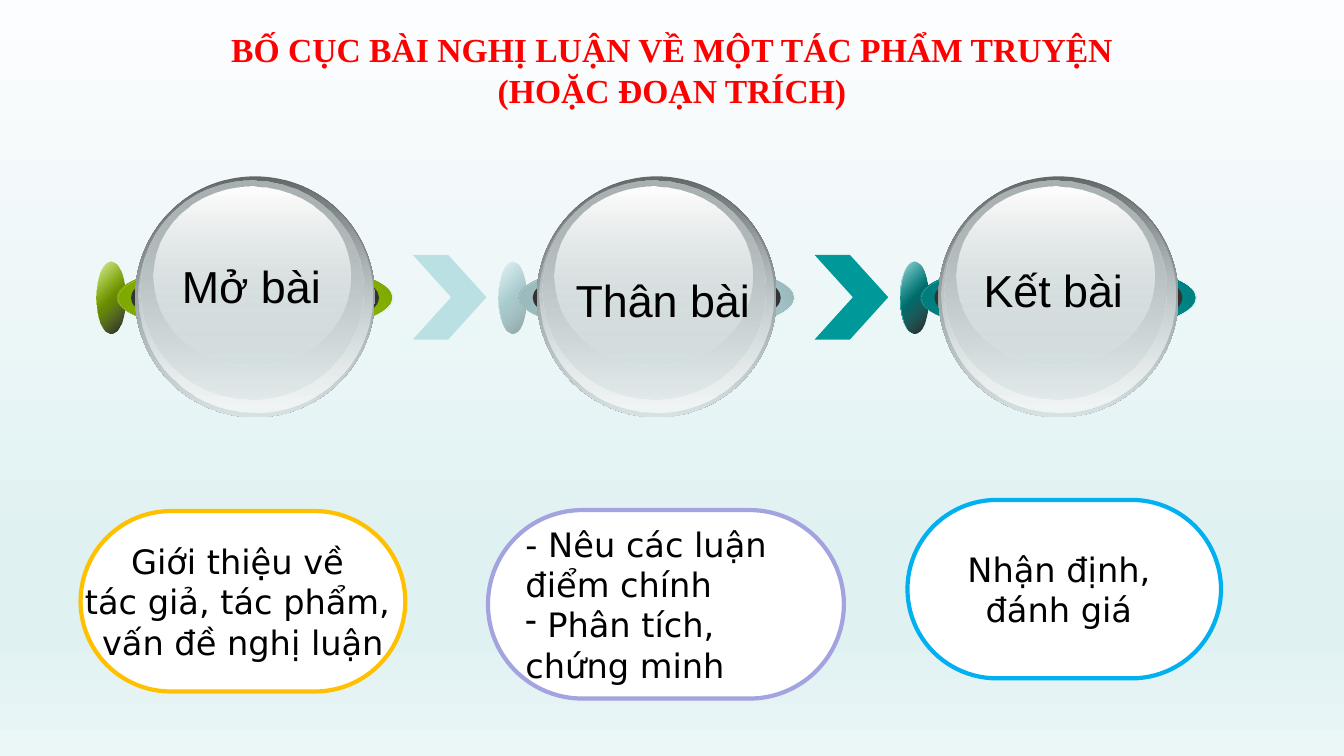
from dataclasses import dataclass

from lxml.etree import SubElement
from pptx import Presentation
from pptx.dml.color import RGBColor
from pptx.enum.shapes import MSO_SHAPE
from pptx.enum.text import MSO_ANCHOR, MSO_AUTO_SIZE, PP_ALIGN
from pptx.oxml import parse_xml
from pptx.oxml.ns import nsdecls, qn
from pptx.util import Inches, Pt

TITLE = "BỐ CỤC BÀI NGHỊ LUẬN VỀ MỘT TÁC PHẨM TRUYỆN (HOẶC ĐOẠN TRÍCH)"
BACKDROP = [(0, "FCFDFE"), (74, "E0F1F2"), (83, "E0F1F2"), (100, "EBF6F7")]
SPHERE_LAYERS = [
    ((0, 0, 100, 100), [(0, "636869"), (100, "D6E1E2")]),
    ((1.3, 0.4, 97.5, 97.5), [(0, "D6E1E2", 0), (100, "F1F5F5")]),
    ((2.3, 1.7, 92.9, 90.8), [(0, "AAB2B3"), (100, "D6E1E2", 48)]),
    ((7.6, 4.2, 82.4, 74.1), [(0, "FFFFFF"), (100, "D6E1E2", 38)]),
]
TITLE_FONT = {"name": "Times New Roman", "size": Pt(24), "bold": True}
LABEL_FONT = {"name": "Arial", "size": Pt(32)}
BUBBLE_FONT = {"name": "DejaVu Sans", "size": Pt(24)}


@dataclass
class Step:
    """One part of the essay, with its sphere label and its bubble."""
    label: str
    label_share: tuple
    tint: str
    knob_end: tuple
    lines: list
    bubble_share: tuple
    border: str
    align: PP_ALIGN = PP_ALIGN.CENTER
    wrap: bool = False


STEPS = [
    Step("Mở bài", (15.1, 32.2, 66.8, 26.8), "99CC00", ("000000", 90),
         ["Giới thiệu về ", "tác giả, tác phẩm, ", "vấn đề nghị luận"],
         (6, 67.6, 24.16, 23.87), "FFC000"),
    Step("Thân bài", (11.8, 38.1, 81.5, 26.8), "BBE0E3", ("86A0A2",),
         ["- Nêu các luận ", "điểm chính", ("-", " Phân tích,"), "chứng minh"],
         (36.31, 67.47, 26.48, 24.93), "A3A3E0", PP_ALIGN.LEFT, True),
    Step("Kết bài", (14.3, 33.9, 67.2, 26.8), "009999", ("000000", 90),
         ["Nhận định, ", "đánh giá "],
         (67.52, 66.13, 23.33, 23.6), "00B0F0"),
]


def color(value):
    """Turn a hex string into a colour."""
    return RGBColor.from_string(value)


def shade(value, factor):
    """Darken a hex colour by a factor."""
    return "".join(f"{round(channel * factor):02X}" for channel in color(value))


def within(box, share):
    """Place percentages of a box as left, top, width and height."""
    left, top, width, height = box
    x, y, w, h = share
    return tuple(round(length) for length in (
        left + width * x / 100, top + height * y / 100,
        width * w / 100, height * h / 100))


def assign(target, values):
    """Set attributes from a dict of format values."""
    for name, value in values.items():
        setattr(target, name, value)


def set_gradient(solid, stops, angle):
    """Replace a solid fill element by a linear gradient."""
    gradient = parse_xml(f'<a:gradFill {nsdecls("a")} rotWithShape="1"><a:gsLst/>'
                         f'<a:lin ang="{angle * 60000}" scaled="1"/></a:gradFill>')
    for position, value, *alpha in stops:
        stop = SubElement(gradient[0], qn("a:gs"), pos=str(position * 1000))
        tone = SubElement(stop, qn("a:srgbClr"), val=value)
        for percent in alpha:
            SubElement(tone, qn("a:alpha"), val=str(percent * 1000))
    solid.getparent().replace(solid, gradient)


def add_figure(slide, preset, box, fill="FFFFFF"):
    """Add a flat, unlined preset shape."""
    figure = slide.shapes.add_shape(preset, *box)
    figure.shadow.inherit = False
    figure.fill.solid()
    figure.fill.fore_color.rgb = color(fill)
    figure.line.fill.background()
    return figure


def add_glossy_ellipse(slide, box, stops, angle):
    """Add an ellipse with a gradient."""
    ellipse = add_figure(slide, MSO_SHAPE.OVAL, box)
    set_gradient(ellipse.fill._xPr.find(qn("a:solidFill")), stops, angle)


def write_lines(frame, lines, font, ink, align):
    """Write one paragraph per line, bulleted where a pair is given."""
    for index, line in enumerate(lines):
        paragraph = frame.add_paragraph() if index else frame.paragraphs[0]
        paragraph.alignment = align
        if isinstance(line, tuple):
            mark, line = line
            SubElement(paragraph._p.get_or_add_pPr(), qn("a:buChar"), char=mark)
        run = paragraph.add_run()
        run.text = line
        assign(run.font, font)
        run.font.color.rgb = color(ink)


def place_title(slide, box):
    """Fill the title placeholder."""
    heading = slide.shapes.title
    assign(heading, dict(zip(("left", "top", "width", "height"), box)))
    assign(heading.text_frame, {"word_wrap": True, "vertical_anchor": MSO_ANCHOR.TOP,
                                "auto_size": MSO_AUTO_SIZE.NONE})
    write_lines(heading.text_frame, [TITLE], TITLE_FONT, "FF0000", PP_ALIGN.CENTER)


def place_sphere(slide, box, step):
    """Draw the knob, ring, glass sphere and label of a step."""
    tint = step.tint
    rim, glow = shade(tint, 0.77), shade(tint, 0.82)
    knob = within(box, (-16, 35.5, 11.8, 29.7))
    add_glossy_ellipse(slide, knob, [(0, "FFFFFF"), (50, tint), (100, "FFFFFF")], 45)
    add_glossy_ellipse(slide, knob, [(0, tint, 32), (100, *step.knob_end)], 45)
    add_glossy_ellipse(slide, within(box, (-7.6, 35.5, 114.7, 29.7)),
                       [(0, rim), (50, tint), (100, rim)], 315)
    add_glossy_ellipse(slide, within(box, (-7, 35.7, 114.7, 29.7)),
                       [(0, glow), (100, tint, 0)], 45)
    add_figure(slide, MSO_SHAPE.OVAL, within(box, (-1.7, 35.5, 103.4, 29.7)), "333333")
    for share, stops in SPHERE_LAYERS:
        add_glossy_ellipse(slide, within(box, share), stops, 90)
    label = slide.shapes.add_textbox(*within(box, step.label_share)).text_frame
    assign(label, {"word_wrap": False, "auto_size": MSO_AUTO_SIZE.SHAPE_TO_FIT_TEXT})
    write_lines(label, [step.label], LABEL_FONT, "000000", PP_ALIGN.CENTER)


def place_chevron(slide, box, tint):
    """Draw the arrow that follows a sphere."""
    chevron = add_figure(slide, MSO_SHAPE.CHEVRON, within(box, (115.8, 32.6, 30.7, 35.1)), tint)
    chevron.adjustments[0] = 0.52


def place_bubble(slide, box, step):
    """Draw the rounded bubble that explains a step."""
    bubble = add_figure(slide, MSO_SHAPE.ROUNDED_RECTANGLE, box)
    bubble.adjustments[0] = 0.5
    bubble.line.color.rgb = color(step.border)
    bubble.line.width = Pt(3)
    assign(bubble.text_frame, {"word_wrap": step.wrap, "vertical_anchor": MSO_ANCHOR.MIDDLE})
    write_lines(bubble.text_frame, step.lines, BUBBLE_FONT, "000000", step.align)


def main():
    """Build and save the slide."""
    deck = Presentation()
    assign(deck, {"slide_width": Inches(13.33), "slide_height": Inches(7.5)})
    page = (0, 0, deck.slide_width, deck.slide_height)
    slide = deck.slides.add_slide(deck.slide_layouts[5])
    slide.background.fill.solid()
    set_gradient(slide.background.fill._xPr.find(qn("a:solidFill")), BACKDROP, 90)
    place_title(slide, within(page, (12.5, 3.2, 75, 12.1)))
    spheres = [within(page, (10.05 + 29.89 * column, 23.33, 17.85, 31.87))
               for column in range(len(STEPS))]
    for sphere, following in zip(spheres, STEPS[1:]):
        place_chevron(slide, sphere, following.tint)
    for sphere, step in zip(spheres, STEPS):
        place_sphere(slide, sphere, step)
        place_bubble(slide, within(page, step.bubble_share), step)
    deck.save("out.pptx")


if __name__ == "__main__":
    main()
